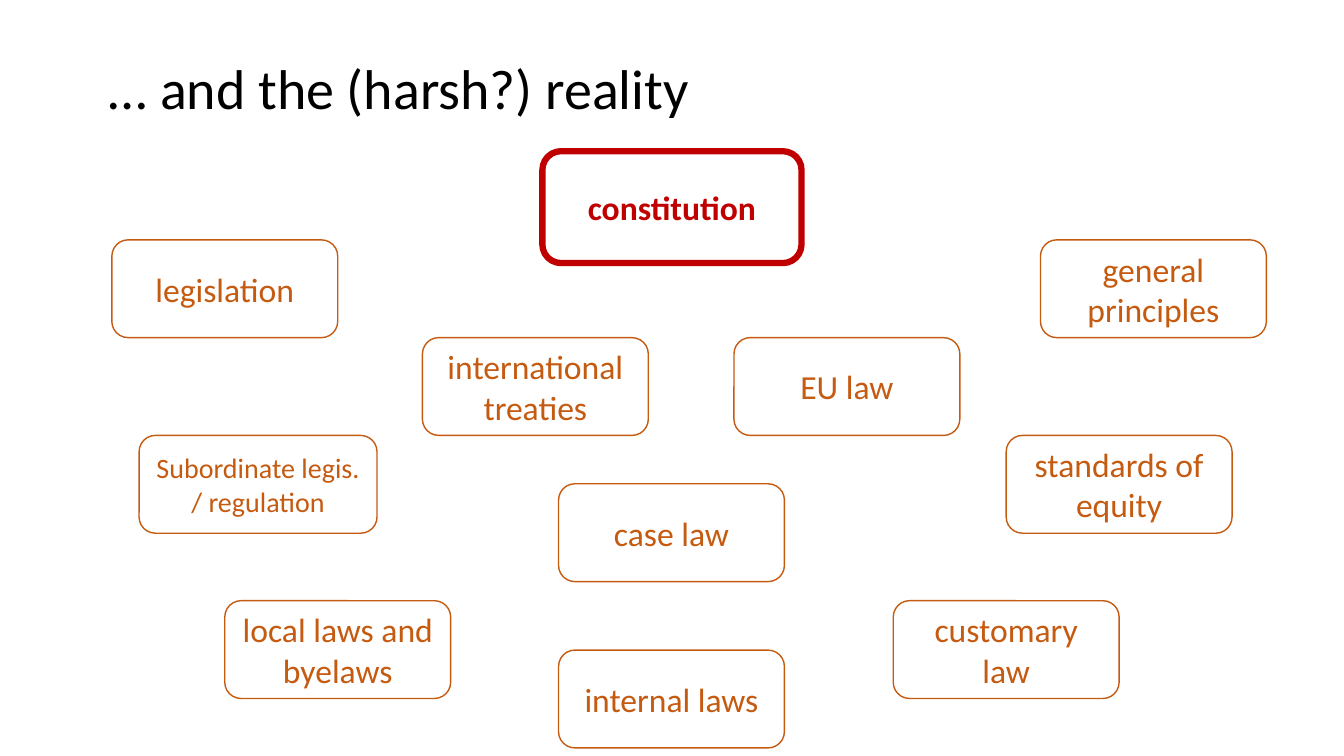
"""Builds a slide that scatters the sources of law around the constitution."""
import pptx
import pptx.dml.color
import pptx.enum.shapes
import pptx.enum.text
import pptx.util

Inches = pptx.util.Inches

COLORS = {"text": "000000", "paper": "FFFFFF", "top": "C00000", "source": "C55A11"}
FONT = "Calibri"
TITLE = "… and the (harsh?) reality"
BOX_WIDTH, BOX_HEIGHT = 2.24, 0.97

SOURCES = [
    ("constitution", 5.38, 1.5,
     {"width": 2.57, "height": 1.11, "color": "top", "weight": 4.5, "bold": True}),
    ("legislation", 1.11, 2.38, {}),
    ("Subordinate legis. / regulation", 1.38, 4.32, {"width": 2.36, "size": 20}),
    ("local laws and byelaws", 2.23, 5.96, {}),
    ("international treaties", 4.19, 3.35, {}),
    ("EU law", 7.28, 3.35, {}),
    ("case law", 5.54, 4.8, {}),
    ("customary law", 8.86, 5.96, {}),
    ("general principles", 10.32, 2.38, {}),
    ("standards of equity", 9.98, 4.32, {}),
    ("internal laws", 5.54, 6.45, {}),
]


def rgb(name):
    """Return the named colour."""
    return pptx.dml.color.RGBColor.from_string(COLORS[name])


def write(shape, text, size=24, color="text", bold=False, align="CENTER", spacing=1.0):
    """Put formatted text, vertically centred, into a shape."""
    frame = shape.text_frame
    frame.word_wrap = True
    frame.auto_size = pptx.enum.text.MSO_AUTO_SIZE.NONE
    frame.vertical_anchor = pptx.enum.text.MSO_ANCHOR.MIDDLE
    para = frame.paragraphs[0]
    para.alignment = pptx.enum.text.PP_ALIGN[align]
    para.line_spacing = spacing
    span = para.add_run()
    span.text = text
    span.font.name = FONT
    span.font.size = pptx.util.Pt(size)
    span.font.bold = bold
    span.font.color.rgb = rgb(color)


def add_source(page, text, left, top, width=BOX_WIDTH, height=BOX_HEIGHT,
               color="source", weight=1, size=24, bold=False):
    """Add one rounded box that names a source of law."""
    box = page.shapes.add_shape(
        pptx.enum.shapes.MSO_SHAPE.ROUNDED_RECTANGLE,
        Inches(left), Inches(top), Inches(width), Inches(height))
    box.shadow.inherit = False
    box.fill.solid()
    box.fill.fore_color.rgb = rgb("paper")
    box.line.color.rgb = rgb(color)
    box.line.width = pptx.util.Pt(weight)
    write(box, text, size=size, color=color, bold=bold)


def main():
    """Build and save the deck."""
    deck = pptx.Presentation()
    deck.slide_width, deck.slide_height = Inches(13.33), Inches(7.5)
    page = deck.slides.add_slide(deck.slide_layouts[5])
    title = page.shapes.title
    title.left, title.top = Inches(0.98), Inches(0.28)
    title.width, title.height = Inches(11.38), Inches(1.25)
    write(title, TITLE, size=40, align="LEFT", spacing=0.9)
    for text, left, top, options in SOURCES:
        add_source(page, text, left, top, **options)
    deck.save("out.pptx")


if __name__ == "__main__":
    main()
